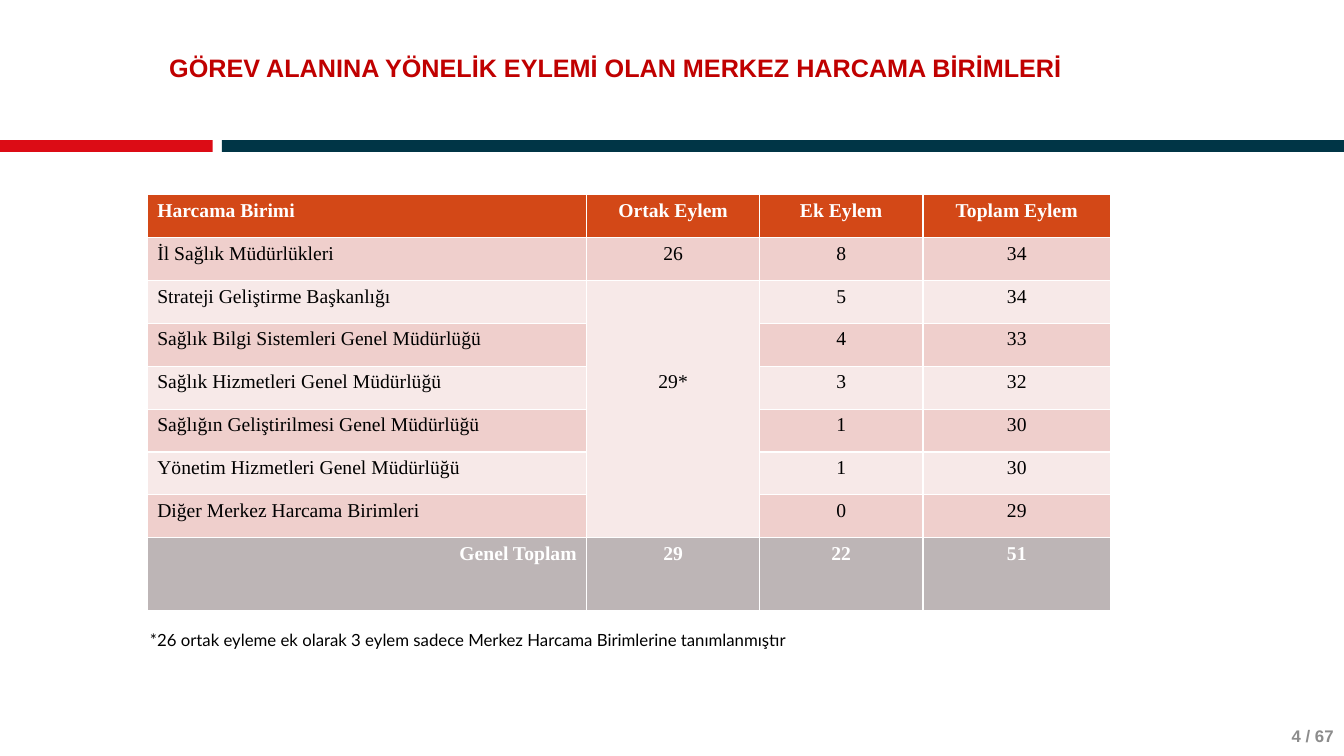
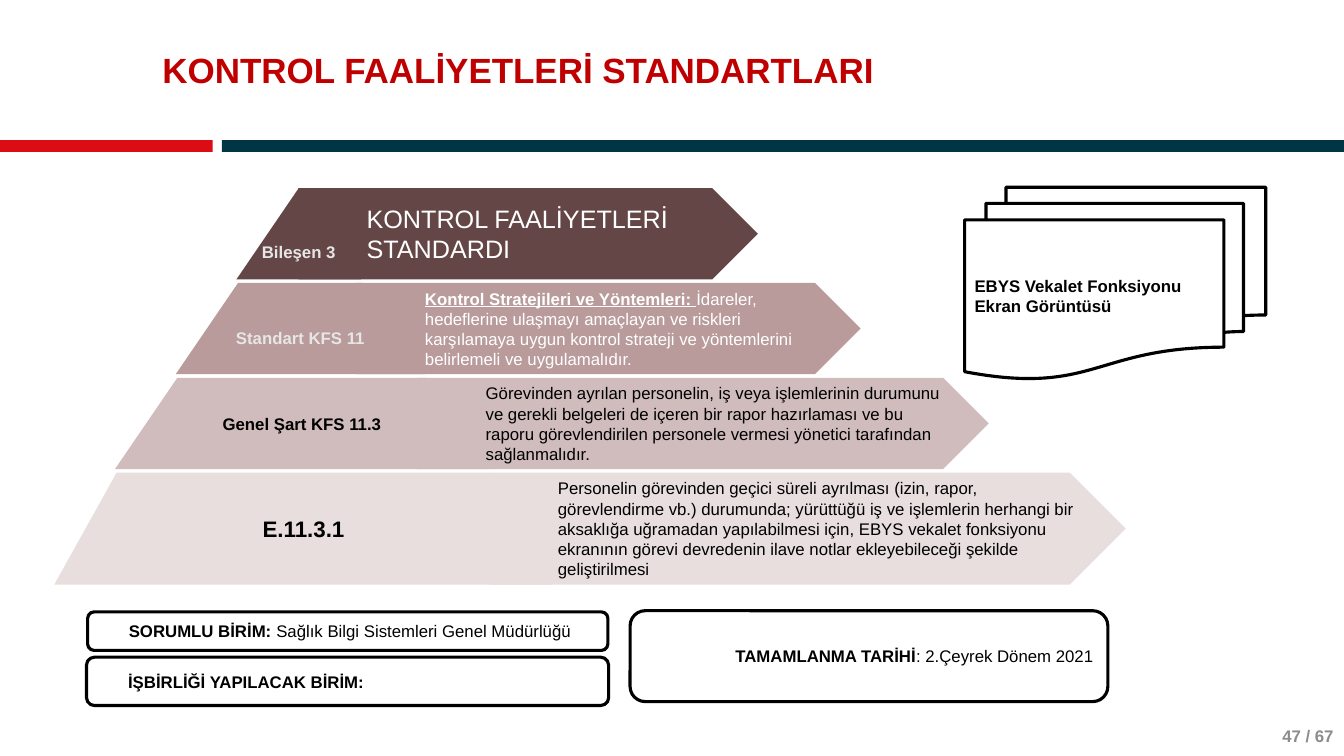
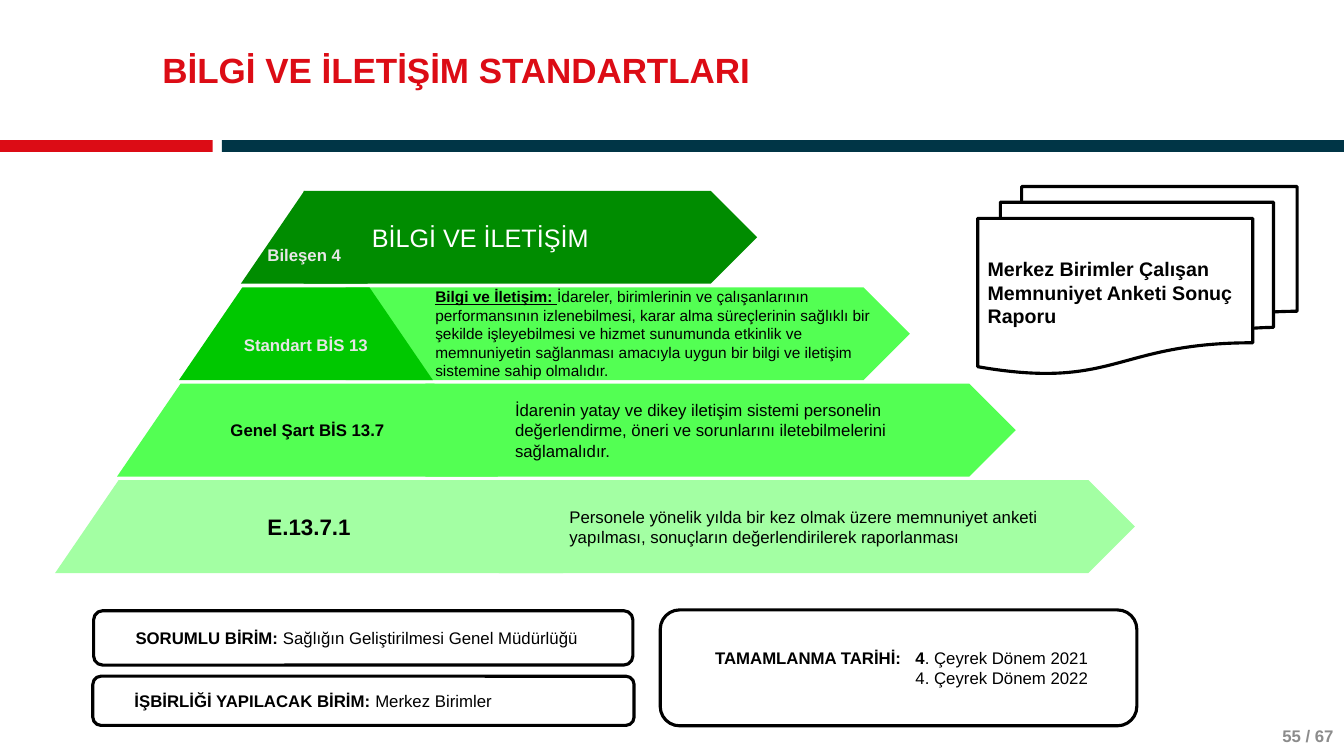
from dataclasses import dataclass

from lxml import etree
from pptx import Presentation
from pptx.dml.color import RGBColor
from pptx.enum.shapes import MSO_SHAPE
from pptx.enum.text import MSO_ANCHOR, MSO_AUTO_SIZE, PP_ALIGN
from pptx.oxml.ns import qn
from pptx.util import Cm, Pt

LEFT, CENTER, RIGHT = PP_ALIGN.LEFT, PP_ALIGN.CENTER, PP_ALIGN.RIGHT
MIDDLE = MSO_ANCHOR.MIDDLE
RECT, ROUNDED = MSO_SHAPE.RECTANGLE, MSO_SHAPE.ROUNDED_RECTANGLE
PENTAGON, DOCUMENTS = MSO_SHAPE.PENTAGON, MSO_SHAPE.FLOWCHART_MULTIDOCUMENT


@dataclass(frozen=True)
class Theme:
    font: str = "Arial"
    table_font: str = "Times New Roman"
    note_font: str = "Lato"
    red: str = "DC0C15"
    dark_red: str = "C00000"
    navy: str = "003546"
    black: str = "000000"
    white: str = "FFFFFF"
    pale: str = "E7E6E6"
    grey: str = "8C8C8C"
    header: str = "D34817"
    bands: tuple = ("EFCFCC", "F7E9E8")
    total: str = "BDB5B6"
    title: float = 25
    small_title: float = 18
    heading: float = 18
    code: float = 16
    table: float = 14
    body: float = 12
    dense: float = 11
    outline: float = 2.25


T = Theme()


def write(tf, paragraphs, size=T.body, color=T.black, align=LEFT, font=T.font):
    """Fill a text frame; each run is (text, bold) or (text, bold, underline)."""
    for i, runs in enumerate(paragraphs):
        p = tf.paragraphs[0] if i == 0 else tf.add_paragraph()
        p.alignment = align
        for text, bold, *underline in runs:
            r = p.add_run()
            r.text = text
            r.font.name, r.font.size, r.font.bold = font, Pt(size), bold
            r.font.color.rgb = RGBColor.from_string(color)
            if underline:
                r.font.underline = True


def style(sp, fill=None, line=None):
    """Give a shape a plain fill and outline and no shadow."""
    sp.shadow.inherit = False
    if fill:
        sp.fill.solid()
        sp.fill.fore_color.rgb = RGBColor.from_string(fill)
    else:
        sp.fill.background()
    if line:
        sp.line.color.rgb = RGBColor.from_string(line)
        sp.line.width = Pt(T.outline)
    else:
        sp.line.fill.background()
    return sp


prs = Presentation()
prs.slide_width, prs.slide_height = Cm(33.87), Cm(19.05)
layout = prs.slide_layouts[5]
title = layout.placeholders[0]
title.left, title.top, title.width, title.height = Cm(3.84), Cm(0.81), Cm(29.9), Cm(2.03)

# Titles and page numbers
HEADS = [
    ("GÖREV ALANINA YÖNELİK EYLEMİ OLAN MERKEZ HARCAMA BİRİMLERİ",
     T.small_title, T.dark_red, "4 / 67"),
    ("KONTROL FAALİYETLERİ STANDARTLARI", T.title, T.dark_red, "47 / 67"),
    ("BİLGİ VE İLETİŞİM STANDARTLARI", T.title, T.red, "55 / 67"),
]
for text, size, color, page in HEADS:
    s = prs.slides.add_slide(layout)
    tf = s.shapes.title.text_frame
    tf.auto_size = MSO_AUTO_SIZE.NONE
    write(tf, [[(text, True)]], size, color)
    tf.paragraphs[0].line_spacing = 0.9
    tf = s.shapes.add_textbox(Cm(26.24), Cm(18.03), Cm(7.62), Cm(1.02)).text_frame
    tf.word_wrap, tf.vertical_anchor = True, MIDDLE
    write(tf, [[(page, True)]], color=T.grey, align=RIGHT)

# Bands under the title, moved to the master
s = prs.slides[0]
for i, (left, width, color) in enumerate([(0, 5.36, T.red), (5.59, 28.28, T.navy)]):
    band = style(s.shapes.add_shape(RECT, Cm(left), Cm(3.53), Cm(width), Cm(0.3)), color)
    band.name = f"Band {i + 1}"
    band._element.nvSpPr.cNvPr.set("id", str(101 + i))
    prs.slide_master.shapes._spTree.insert(2 + i, band._element)

# Slide 1: table of actions
title = s.shapes.title
title.left, title.top, title.width, title.height = Cm(4.01), Cm(0.74), Cm(24.74), Cm(2.03)
ROWS = [
    ("Harcama Birimi", "Ortak Eylem", "Ek Eylem", "Toplam Eylem"),
    ("İl Sağlık Müdürlükleri", "26", "8", "34"),
    ("Strateji Geliştirme Başkanlığı", "29*", "5", "34"),
    ("Sağlık Bilgi Sistemleri Genel Müdürlüğü", "", "4", "33"),
    ("Sağlık Hizmetleri Genel Müdürlüğü", "", "3", "32"),
    ("Sağlığın Geliştirilmesi Genel Müdürlüğü", "", "1", "30"),
    ("Yönetim Hizmetleri Genel Müdürlüğü", "", "1", "30"),
    ("Diğer Merkez Harcama Birimleri", "", "0", "29"),
    ("Genel Toplam", "29", "22", "51"),
]
last = len(ROWS) - 1
table = s.shapes.add_table(len(ROWS), 4, Cm(3.71), Cm(4.91), Cm(24.28), Cm(10.47)).table
for column, width in zip(table.columns, (11.08, 4.35, 4.12, 4.73)):
    column.width = Cm(width)
for i, row in enumerate(ROWS):
    table.rows[i].height = Cm(1.83 if i == last else 1.08)
    strong = i in (0, last)
    fill = {0: T.header, last: T.total}.get(i, T.bands[(i + 1) % 2])
    for j, text in enumerate(row):
        cell = table.cell(i, j)
        cell.fill.solid()
        cell.fill.fore_color.rgb = RGBColor.from_string(fill)
        align = CENTER if j else RIGHT if i == last else LEFT
        if text:
            write(cell.text_frame, [[(text, strong)]], T.table,
                  T.white if strong else T.black, align, T.table_font)
shared = table.cell(2, 1)
shared.merge(table.cell(last - 1, 1))
shared.vertical_anchor, shared.margin_bottom = MIDDLE, Cm(1.5)

tf = s.shapes.add_textbox(Cm(3.53), Cm(15.75), Cm(16.87), Cm(0.76)).text_frame
tf.word_wrap = True
write(tf, [[("*26 ortak eyleme ek olarak 3 eylem sadece Merkez Harcama Birimlerine "
             "tanımlanmıştır", False)]], font=T.note_font)

# Slides 2 and 3: pyramid levels, documents and boxes
# level: label, label size, label colour, label fill, top inset, height,
#        plate left, plate width, plate fill, text inset, text size, text colour, runs
PYRAMIDS = [
    dict(
        apex=7.53, half=1.57, top=4.74, pitch=2.39,
        levels=[
            ("Bileşen 3", T.body, T.pale, "644646", 0.94, 2.3,
             7.52, 11.58, "644646", 1.72, T.heading, T.white,
             [("KONTROL FAALİYETLERİ STANDARDI", False)]),
            ("Standart KFS 11", T.body, T.pale, "B99B9B", 0.5, 2.3,
             8.99, 12.7, "B99B9B", 1.72, T.body, T.white,
             [("Kontrol Stratejileri ve Yöntemleri: ", True, True),
              ("İdareler, hedeflerine ulaşmayı amaçlayan ve riskleri karşılamaya uygun "
               "kontrol strateji ve yöntemlerini belirlemeli ve uygulamalıdır.", False)]),
            ("Genel Şart KFS 11.3", T.body, T.black, "D0BCBC", 0.05, 2.3,
             10.52, 14.4, "D0BCBC", 1.72, T.body, T.black,
             [("Görevinden ayrılan personelin, iş veya işlemlerinin durumunu ve gerekli "
               "belgeleri de içeren bir rapor hazırlaması ve bu raporu görevlendirilen "
               "personele vermesi yönetici tarafından sağlanmalıdır.", False)]),
            ("E.11.3.1", T.code, T.black, "E8DEDE", 0.05, 2.82,
             12.34, 16.03, "E8DEDE", 1.72, T.body, T.black,
             [("Personelin görevinden geçici süreli ayrılması (izin, rapor, görevlendirme "
               "vb.) durumunda; yürüttüğü iş ve işlemlerin herhangi bir aksaklığa "
               "uğramadan yapılabilmesi için, EBYS vekalet fonksiyonu ekranının görevi "
               "devredenin ilave notlar ekleyebileceği şekilde geliştirilmesi", False)]),
        ],
        documents=((24.31, 4.72, 7.59, 4.83), T.body,
                   "EBYS Vekalet Fonksiyonu Ekran Görüntüsü"),
        boxes=[
            ((2.21, 15.42, 13.11, 0.97), 0.99, LEFT,
             [[("SORUMLU BİRİM: ", True),
               ("Sağlık Bilgi Sistemleri Genel Müdürlüğü", False)]]),
            ((15.88, 15.39, 12.04, 2.29), 1.24, RIGHT,
             [[("TAMAMLANMA TARİHİ", True), (": 2.Çeyrek Dönem 2021", False)]]),
            ((2.18, 16.56, 13.16, 1.22), 0.99, LEFT,
             [[("İŞBİRLİĞİ YAPILACAK BİRİM:", True)]]),
        ],
    ),
    dict(
        apex=7.67, half=1.6, top=4.81, pitch=2.43,
        levels=[
            ("Bileşen 4", T.body, T.pale, "008C00", 0.94, 2.34,
             7.65, 11.43, "008C00", 1.72, T.heading, T.white,
             [("BİLGİ VE İLETİŞİM", False)]),
            ("Standart BİS 13", T.body, T.pale, "00C800", 0.6, 2.34,
             8.71, 14.22, "53FF53", 2.26, T.dense, T.black,
             [("Bilgi ve İletişim: ", True, True),
              ("İdareler, birimlerinin ve çalışanlarının performansının izlenebilmesi, "
               "karar alma süreçlerinin sağlıklı bir şekilde işleyebilmesi ve hizmet "
               "sunumunda etkinlik ve memnuniyetin sağlanması amacıyla uygun bir bilgi ve "
               "iletişim sistemine sahip olmalıdır.", False)]),
            ("Genel Şart BİS 13.7", T.body, T.black, "53FF53", 0.05, 2.34,
             10.72, 14.88, "53FF53", 2.26, T.body, T.black,
             [("İdarenin yatay ve dikey iletişim sistemi personelin değerlendirme, öneri "
               "ve sorunlarını iletebilmelerini sağlamalıdır.", False)]),
            ("E.13.7.1", T.code, T.black, "A3FFA3", 0.05, 2.34,
             12.57, 16.03, "A3FFA3", 1.78, T.body, T.black,
             [("Personele yönelik yılda bir kez olmak üzere memnuniyet anketi yapılması, "
               "sonuçların değerlendirilerek raporlanması", False)]),
        ],
        documents=((24.64, 4.7, 8.05, 4.72), T.table,
                   "Merkez Birimler Çalışan Memnuniyet Anketi Sonuç Raporu"),
        boxes=[
            ((16.64, 15.37, 12.01, 2.92), 1.24, LEFT,
             [[("TAMAMLANMA TARİHİ:\t4", True), (". Çeyrek Dönem 2021", False)],
              [("\t4. Çeyrek Dönem 2022", False)]]),
            ((2.36, 15.39, 13.59, 1.37), 0.99, LEFT,
             [[("SORUMLU BİRİM: ", True),
               ("Sağlığın Geliştirilmesi Genel Müdürlüğü", False)]]),
            ((2.34, 17.04, 13.64, 1.24), 0.99, LEFT,
             [[("İŞBİRLİĞİ YAPILACAK BİRİM: ", True), ("Merkez Birimler", False)]]),
        ],
    ),
]
DRIFT = 0.04  # each level's centre sits slightly further right
DATE_TAB = Cm(5.05)

for s, pyramid in zip(list(prs.slides)[1:], PYRAMIDS):
    half = pyramid["half"]
    for i, level in enumerate(pyramid["levels"]):
        (label, label_size, label_color, label_fill, inset, height,
         left, width, fill, indent, size, color, runs) = level
        top = pyramid["top"] + i * pyramid["pitch"]
        bottom = top + height

        # Arrow plate with the description
        sp = style(s.shapes.add_shape(PENTAGON, Cm(left), Cm(top), Cm(width), Cm(height)), fill)
        sp.text_frame.margin_left = Cm(indent)
        write(sp.text_frame, [runs], size, color)

        # Pyramid slice with the label
        mid = pyramid["apex"] + i * DRIFT
        near, far = i * half, (i + 1) * half
        corners = [(Cm(x), Cm(y)) for x, y in (
            (mid - far, bottom), (mid - near, top), (mid + near, top), (mid + far, bottom))]
        outline = s.shapes.build_freeform(*corners[0], scale=1.0)
        outline.add_line_segments(corners[1:], close=True)
        sp = style(outline.convert_to_shape(), label_fill)
        tf = sp.text_frame
        tf.margin_left = tf.margin_right = tf.margin_bottom = Cm(0.05)
        tf.margin_top = Cm(inset)
        write(tf, [[(label, True)]], label_size, label_color, CENTER)

    # Stacked documents
    at, size, text = pyramid["documents"]
    sp = style(s.shapes.add_shape(DOCUMENTS, *map(Cm, at)), line=T.black)
    write(sp.text_frame, [[(text, True)]], size)

    # Responsibility and date boxes
    for at, indent, align, paragraphs in pyramid["boxes"]:
        sp = style(s.shapes.add_shape(ROUNDED, *map(Cm, at)), T.white, T.black)
        tf = sp.text_frame
        tf.margin_left = Cm(indent)
        write(tf, paragraphs, align=align)
        for p in tf.paragraphs:
            if "\t" in p.text:
                tabs = etree.SubElement(p._p.get_or_add_pPr(), qn("a:tabLst"))
                etree.SubElement(tabs, qn("a:tab"), pos=str(DATE_TAB), algn="l")

prs.save("out.pptx")
